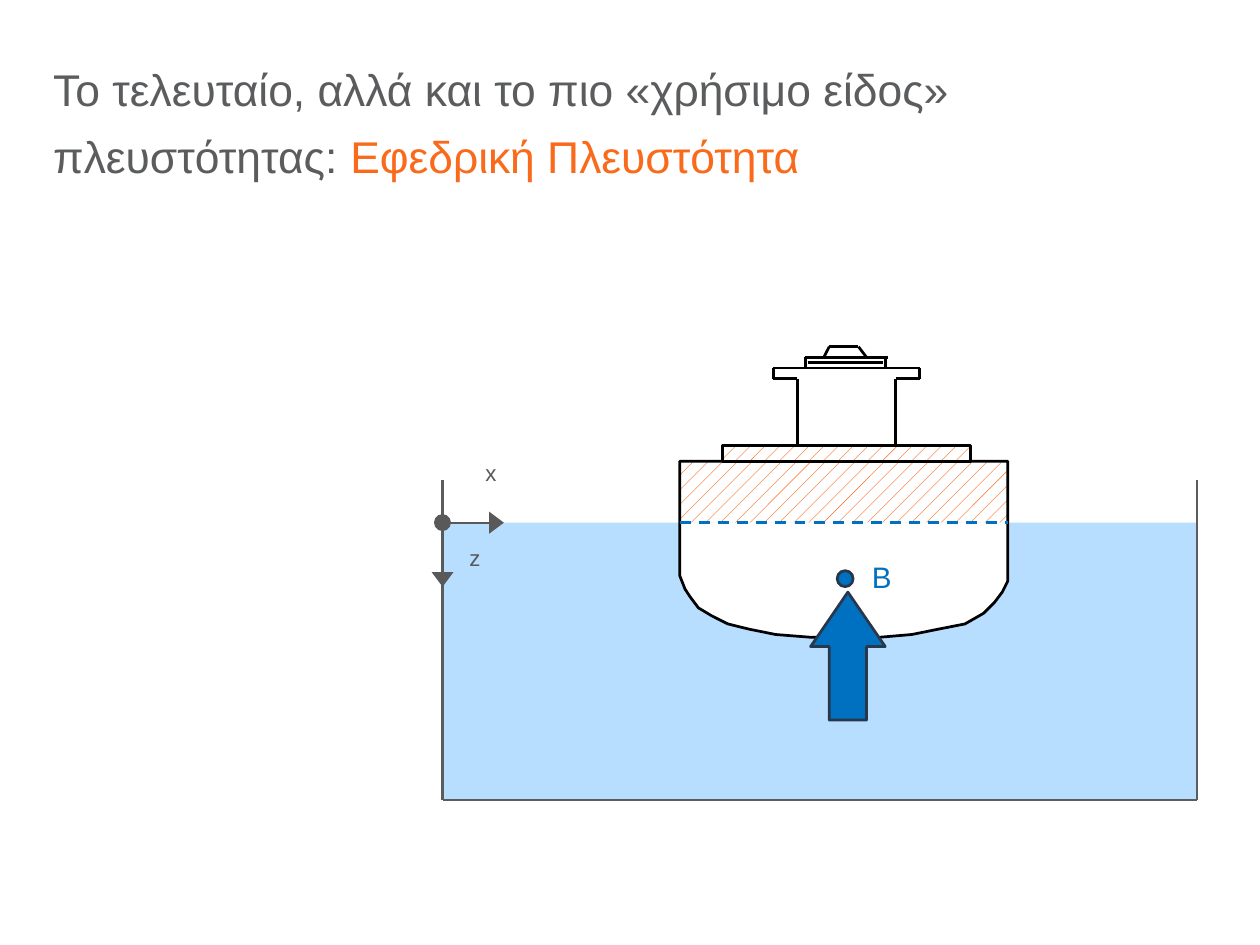
from lxml import etree
from pptx import Presentation
from pptx.dml.color import RGBColor
from pptx.enum.dml import MSO_LINE, MSO_PATTERN
from pptx.enum.shapes import MSO_CONNECTOR, MSO_SHAPE
from pptx.enum.text import MSO_ANCHOR
from pptx.oxml.ns import qn
from pptx.util import Emu, Inches, Pt

RECT, OVAL, ARROW = MSO_SHAPE.RECTANGLE, MSO_SHAPE.OVAL, MSO_SHAPE.UP_ARROW
STRAIGHT = MSO_CONNECTOR.STRAIGHT
HATCH = MSO_PATTERN.WIDE_UPWARD_DIAGONAL
DASH = MSO_LINE.DASH
TOP, MIDDLE = MSO_ANCHOR.TOP, MSO_ANCHOR.MIDDLE
WIDTH, HEIGHT = Emu(4321175), Emu(3240088)

WHITE = RGBColor(0xFF, 0xFF, 0xFF)
BLACK = RGBColor(0x00, 0x00, 0x00)
GRAY = RGBColor(0x5B, 0x5C, 0x5E)
DARK = RGBColor(0x59, 0x59, 0x59)
ORANGE = RGBColor(0xF9, 0x6A, 0x1B)
WATER = RGBColor(0xB7, 0xDD, 0xFF)
BLUE = RGBColor(0x00, 0x70, 0xC0)
NAVY = RGBColor(0x28, 0x37, 0x4A)

BILGE = [
    (0, 0.43), (0.02, 0.48), (0.04, 0.51), (0.07, 0.55), (0.12, 0.58),
    (0.18, 0.61), (0.26, 0.63), (0.36, 0.65), (0.49, 0.66), (0.75, 0.66),
    (0.87, 0.65), (0.97, 0.63), (1.07, 0.61), (1.14, 0.57), (1.18, 0.53),
    (1.21, 0.49), (1.23, 0.45), (1.23, 0.4),
]
CABIN = [
    (0.35, -0.35, 0.9, -0.35), (0.47, -0.39, 0.78, -0.39),
    (0.47, -0.39, 0.47, -0.35), (0.77, -0.39, 0.77, -0.35),
    (0.44, -0.31, 0.44, -0.06), (0.35, -0.35, 0.35, -0.31),
    (0.35, -0.31, 0.44, -0.31), (0.81, -0.31, 0.81, -0.06),
    (0.81, -0.31, 0.9, -0.31), (0.9, -0.35, 0.9, -0.31),
    (0.56, -0.43, 0.54, -0.39), (0.67, -0.43, 0.7, -0.39),
    (0.56, -0.43, 0.67, -0.43), (0.48, -0.37, 0.76, -0.37),
]


def style(shape, fill=None, line=None, width=0.75, hatch=False):
    """Set the fill and outline of a shape."""
    shape.shadow.inherit = False
    if hatch:
        shape.fill.patterned()
        shape.fill.pattern = HATCH
        shape.fill.fore_color.rgb = ORANGE
        shape.fill.back_color.rgb = WHITE
    elif fill is None:
        shape.fill.background()
    else:
        shape.fill.solid()
        shape.fill.fore_color.rgb = fill
    if line is None:
        shape.line.fill.background()
    else:
        shape.line.color.rgb = line
        shape.line.width = Pt(width)


def block(slide, kind, x, y, w, h, **look):
    """Add a styled preset shape."""
    shape = slide.shapes.add_shape(kind, Inches(x), Inches(y), Inches(w), Inches(h))
    style(shape, **look)
    return shape


def trace(slide, x, y, points, **look):
    """Add a closed outline through points offset from x, y."""
    spots = [(Inches(x + dx), Inches(y + dy)) for dx, dy in points]
    build = slide.shapes.build_freeform(*spots[0])
    build.add_line_segments(spots[1:], close=True)
    style(build.convert_to_shape(), **look)


def rule(slide, x1, y1, x2, y2, color, width=0.75, dash=None, arrow=False):
    """Add a straight line, dashed or with an arrowhead if asked."""
    line = slide.shapes.add_connector(
        STRAIGHT, Inches(x1), Inches(y1), Inches(x2), Inches(y2))
    line.line.color.rgb = color
    line.line.width = Pt(width)
    if dash:
        line.line.dash_style = dash
    props = line._element.spPr
    if arrow:
        etree.SubElement(props.find(qn("a:ln")), qn("a:tailEnd"),
                         type="triangle", w="med", len="sm")
    etree.SubElement(props, qn("a:effectLst"))


def text(slide, box, runs, size, pad=(0, 0), anchor=TOP, space=None):
    """Add a text box from (words, color) runs."""
    frame = slide.shapes.add_textbox(*[Inches(v) for v in box]).text_frame
    frame.word_wrap = True
    frame.vertical_anchor = anchor
    frame.margin_left = frame.margin_right = Inches(pad[0])
    frame.margin_top = frame.margin_bottom = Inches(pad[1])
    para = frame.paragraphs[0]
    if space:
        para.line_spacing = space
    for words, color in runs:
        run = para.add_run()
        run.text = words
        run.font.name = "Arial"
        run.font.size = Pt(size)
        run.font.color.rgb = color


def title(slide, box):
    """Write the two-colored heading in its box."""
    runs = [("Το τελευταίο, αλλά και το πιο «χρήσιμο είδος» πλευστότητας: ", GRAY),
            ("Εφεδρική Πλευστότητα", ORANGE)]
    text(slide, box, runs, 12, anchor=MIDDLE, space=1.25)


def tank(slide, x, y, w, h):
    """Draw the water with its three walls."""
    block(slide, RECT, x, y, w, h, fill=WATER)
    for side in (x, x + w):
        rule(slide, side, y - 0.16, side, y + h, GRAY)
    rule(slide, x, y + h, x + w, y + h, GRAY)


def axes(slide, x, y):
    """Draw the x and z axes from their origin."""
    rule(slide, x, y, x + 0.23, y, DARK, width=0.5, arrow=True)
    rule(slide, x, y, x, y + 0.24, DARK, width=0.5, arrow=True)
    block(slide, OVAL, x - 0.03, y - 0.03, 0.06, 0.06, fill=DARK, line=DARK, width=0.25)
    for name, dx, dy in (("x", 0.02, -0.29), ("z", -0.04, 0.03)):
        text(slide, (x + dx, y + dy, 0.35, 0.25), [(name, DARK)], 6, pad=(0.14, 0.07))


def ship(slide, x, y, w, draft):
    """Draw the hull, its hatched reserve and the cabin above the deck."""
    block(slide, RECT, x, y, w, draft, hatch=True)
    trace(slide, x, y, [(0, draft), *BILGE, (w, draft)], fill=WHITE)
    trace(slide, x, y, [(0, 0), *BILGE, (w, 0)], line=BLACK)
    for x1, y1, x2, y2 in CABIN:
        rule(slide, x + x1, y + y1, x + x2, y + y2, BLACK)
    block(slide, RECT, x + 0.16, y - 0.06, 0.93, 0.06, line=BLACK, hatch=True)


def lift(slide, x, y, w, h):
    """Draw the buoyancy arrow with point B above it."""
    arrow = block(slide, ARROW, x, y, w, h, fill=BLUE, line=NAVY)
    arrow.adjustments[0] = 0.5
    arrow.adjustments[1] = 0.73
    block(slide, OVAL, x + 0.1, y - 0.08, 0.06, 0.06, fill=BLUE, line=NAVY)
    text(slide, (x + 0.23, y - 0.19, 0.41, 0.28), [("B", BLUE)], 8, pad=(0, 0.07))


def main():
    """Build and save the slide."""
    deck = Presentation()
    deck.slide_width, deck.slide_height = WIDTH, HEIGHT
    slide = deck.slides.add_slide(deck.slide_layouts[6])
    title(slide, (0.2, 0.2, 4.33, 0.47))
    tank(slide, 1.66, 1.96, 2.83, 1.04)
    axes(slide, 1.66, 1.96)
    ship(slide, 2.55, 1.73, 1.23, 0.23)
    lift(slide, 3.04, 2.22, 0.28, 0.48)
    rule(slide, 2.55, 1.96, 3.78, 1.96, BLUE, dash=DASH)
    deck.save("out.pptx")


if __name__ == "__main__":
    main()
